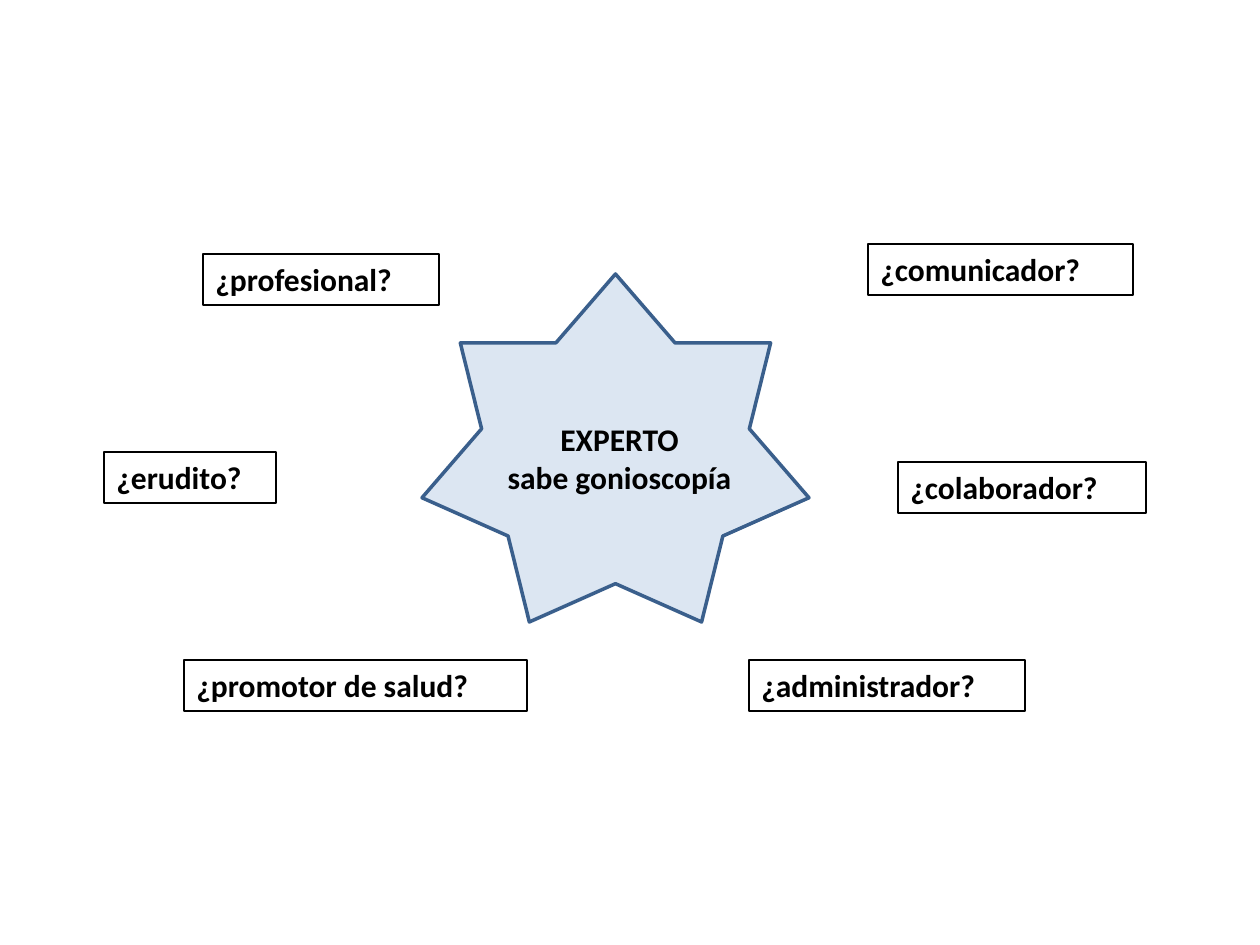
import pptx
import pptx.util
import pptx.dml.color
import pptx.enum.shapes
import pptx.enum.text

PX = 914400 // 126
COLORS = {"star": "DCE6F2", "edge": "3A5F8C", "ink": "000000"}
FONT = {"name": "Calibri", "size": pptx.util.Pt(18), "bold": True}
FRAME = {"word_wrap": True, "vertical_anchor": pptx.enum.text.MSO_ANCHOR.TOP}
SHAPES = pptx.enum.shapes.MSO_SHAPE
ALIGN = pptx.enum.text.PP_ALIGN


def rgb(name):
    return pptx.dml.color.RGBColor.from_string(COLORS[name])


def write(sp, lines, align):
    tf = sp.text_frame
    for key, value in FRAME.items():
        setattr(tf, key, value)
    for i, line in enumerate(lines):
        p = tf.paragraphs[0] if i == 0 else tf.add_paragraph()
        p.alignment = align
        r = p.add_run()
        r.text = line
        for key, value in FONT.items():
            setattr(r.font, key, value)
        r.font.color.rgb = rgb("ink")


prs = pptx.Presentation()
prs.slide_width = 1260 * PX
prs.slide_height = 945 * PX
s = prs.slides.add_slide(prs.slide_layouts[6])

star = s.shapes.add_shape(SHAPES.STAR_7_POINT, 422 * PX, 274 * PX, 387 * PX, 348 * PX)
star.shadow.inherit = False
star.fill.solid()
star.fill.fore_color.rgb = rgb("star")
star.line.color.rgb = rgb("edge")
star.line.width = pptx.util.Pt(2)

center = s.shapes.add_textbox(471 * PX, 414 * PX, 297 * PX, 89 * PX)
write(center, ["EXPERTO", "sabe gonioscopía"], ALIGN.CENTER)

roles = [
    ("¿comunicador?", 868, 244, 265),
    ("¿colaborador?", 898, 462, 248),
    ("¿administrador?", 749, 660, 276),
    ("¿promotor de salud?", 184, 660, 343),
    ("¿erudito?", 104, 452, 172),
    ("¿profesional?", 203, 254, 236),
]
for text, left, top, width in roles:
    sp = s.shapes.add_shape(SHAPES.RECTANGLE, left * PX, top * PX, width * PX, 51 * PX)
    sp.shadow.inherit = False
    sp.fill.background()
    sp.line.color.rgb = rgb("ink")
    sp.line.width = pptx.util.Pt(0.75)
    write(sp, [text], ALIGN.LEFT)

prs.save("out.pptx")
